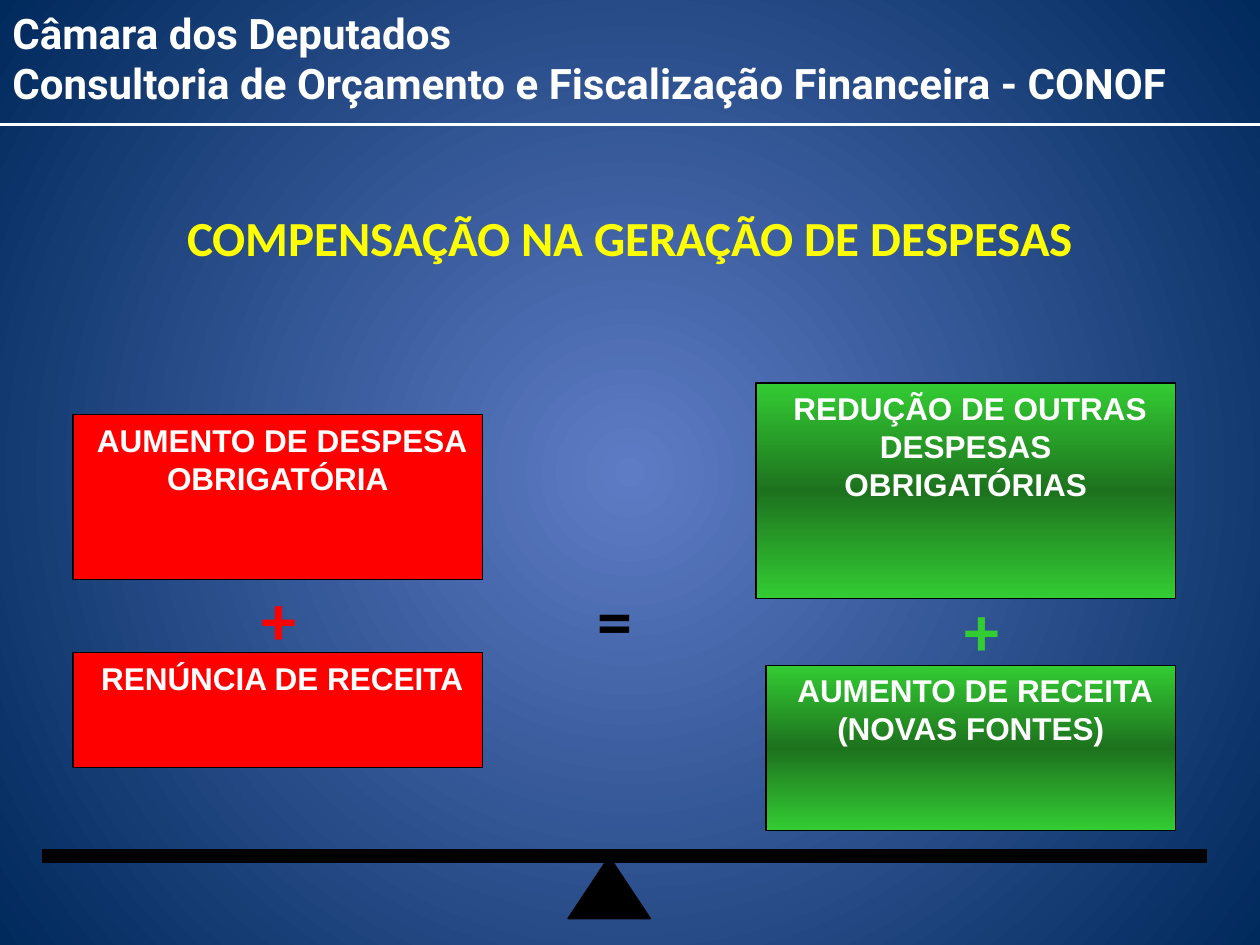
from lxml import etree
from pptx import Presentation
from pptx import util as u
from pptx.dml.color import RGBColor
from pptx.enum import shapes, text
from pptx.oxml import ns

Inches, Pt = u.Inches, u.Pt
C = {"red": "FF0000", "green": "33CC33", "dark_green": "1D721D",
     "black": "000000", "white": "FFFFFF", "yellow": "FFFF00",
     "bg_center": "5E7CC5", "bg_edge": "00295C"}


def rgb(name):
    return RGBColor.from_string(C[name])


def sub(parent, tag, **attrs):
    return etree.SubElement(parent, ns.qn(tag), attrs)


def set_gradient(fill, root, stops, angle=None):
    """Linear gradient at an angle, or a circular one from the centre."""
    fill.gradient()
    grad = root.find(".//" + ns.qn("a:gradFill"))
    for child in list(grad):
        grad.remove(child)
    lst = sub(grad, "a:gsLst")
    for pos, name in stops:
        gs = sub(lst, "a:gs", pos=str(pos * 1000))
        sub(gs, "a:srgbClr", val=C[name])
    if angle is None:
        path = sub(grad, "a:path", path="circle")
        sub(path, "a:fillToRect", **{side: "50000" for side in "ltrb"})
    else:
        sub(grad, "a:lin", ang=str(angle * 60000), scaled="0")


def write(sp, lines, size, color="white", font="Arial",
          align=text.PP_ALIGN.CENTER, before=0, after=0):
    tf = sp.text_frame
    tf.word_wrap = True
    tf.auto_size = text.MSO_AUTO_SIZE.NONE
    tf.vertical_anchor = text.MSO_ANCHOR.TOP
    for i, line in enumerate(lines):
        p = tf.add_paragraph() if i else tf.paragraphs[0]
        p.alignment = align
        p.space_before, p.space_after = Pt(before), Pt(after)
        r = p.add_run()
        r.text = line
        r.font.name, r.font.size, r.font.bold = font, Pt(size), True
        r.font.color.rgb = rgb(color)


def add_line(s, x1, y1, x2, y2, color, width):
    line = s.shapes.add_connector(
        shapes.MSO_CONNECTOR.STRAIGHT, *map(Inches, (x1, y1, x2, y2)))
    line.line.color.rgb = rgb(color)
    line.line.width = Pt(width)
    sub(line._element.spPr, "a:effectLst")


def add_solid(s, kind, box, width):
    sp = s.shapes.add_shape(kind, *map(Inches, box))
    sp.shadow.inherit = False
    sp.fill.solid()
    sp.fill.fore_color.rgb = rgb("black")
    sp.line.color.rgb = rgb("black")
    sp.line.width = Pt(width)
    return sp


def add_weight(s, label, color, box):
    sp = add_solid(s, shapes.MSO_SHAPE.RECTANGLE, box, 0.75)
    if color == "green":
        stops = [(0, "green"), (50, "dark_green"), (100, "green")]
        set_gradient(sp.fill, sp._element.spPr, stops, angle=90)
    else:
        sp.fill.fore_color.rgb = rgb(color)
    write(sp, [" " + label], 18, before=15, after=14.4)


def add_sign(s, sign, color, x, y):
    sp = s.shapes.add_textbox(*map(Inches, (x, y, 0.92, 0.77)))
    write(sp, [sign], 40, color, "Calibri", before=25, after=24)


def add_header(s, x, y, w, h):
    sp = s.shapes.add_textbox(*map(Inches, (x, y, w, h)))
    write(sp, ["Câmara dos Deputados",
               "Consultoria de Orçamento e Fiscalização Financeira - CONOF"],
          24, font="Roboto", align=text.PP_ALIGN.LEFT)
    add_line(s, x + w, 0.99, x, 0.99, "white", 1.5)


def add_title(s, x, y, w, h):
    sp = s.shapes.title
    sp.left, sp.top, sp.width, sp.height = map(Inches, (x, y, w, h))
    write(sp, ["COMPENSAÇÃO NA GERAÇÃO DE DESPESAS"], 28, "yellow", "Calibri")


def add_pan(s, color, weights, sign_at):
    """One side of the scale: two weights joined by a plus sign."""
    for label, box in weights:
        add_weight(s, label, color, box)
    add_sign(s, "+", color, *sign_at)


def add_scale(s, x, y, w):
    add_solid(s, shapes.MSO_SHAPE.ISOSCELES_TRIANGLE,
              (x + 4.18, y + 0.01, 0.65, 0.49), 1)
    add_line(s, x, y, x + w, y, "black", 8)


def main():
    prs = Presentation()
    prs.slide_width, prs.slide_height = Inches(10), Inches(7.5)
    s = prs.slides.add_slide(prs.slide_layouts[5])
    set_gradient(s.background.fill, s._element,
                 [(0, "bg_center"), (100, "bg_edge")])

    # Heading
    add_header(s, 0, 0.01, 10, 0.91)
    add_title(s, 0, 1.6, 10, 0.57)

    # Expenses on the left, compensation on the right
    add_pan(s, "red", [
        ("AUMENTO DE DESPESA OBRIGATÓRIA", (0.58, 3.29, 3.25, 1.31)),
        ("RENÚNCIA DE RECEITA", (0.58, 5.18, 3.25, 0.91)),
    ], (1.75, 4.52))
    add_sign(s, "=", "black", 4.42, 4.53)
    add_pan(s, "green", [
        ("REDUÇÃO DE OUTRAS DESPESAS OBRIGATÓRIAS", (6, 3.04, 3.33, 1.71)),
        ("AUMENTO DE RECEITA (NOVAS FONTES)", (6.08, 5.28, 3.25, 1.31)),
    ], (7.33, 4.61))

    # Beam and pivot
    add_scale(s, 0.33, 6.79, 9.25)
    prs.save("out.pptx")


if __name__ == "__main__":
    main()
